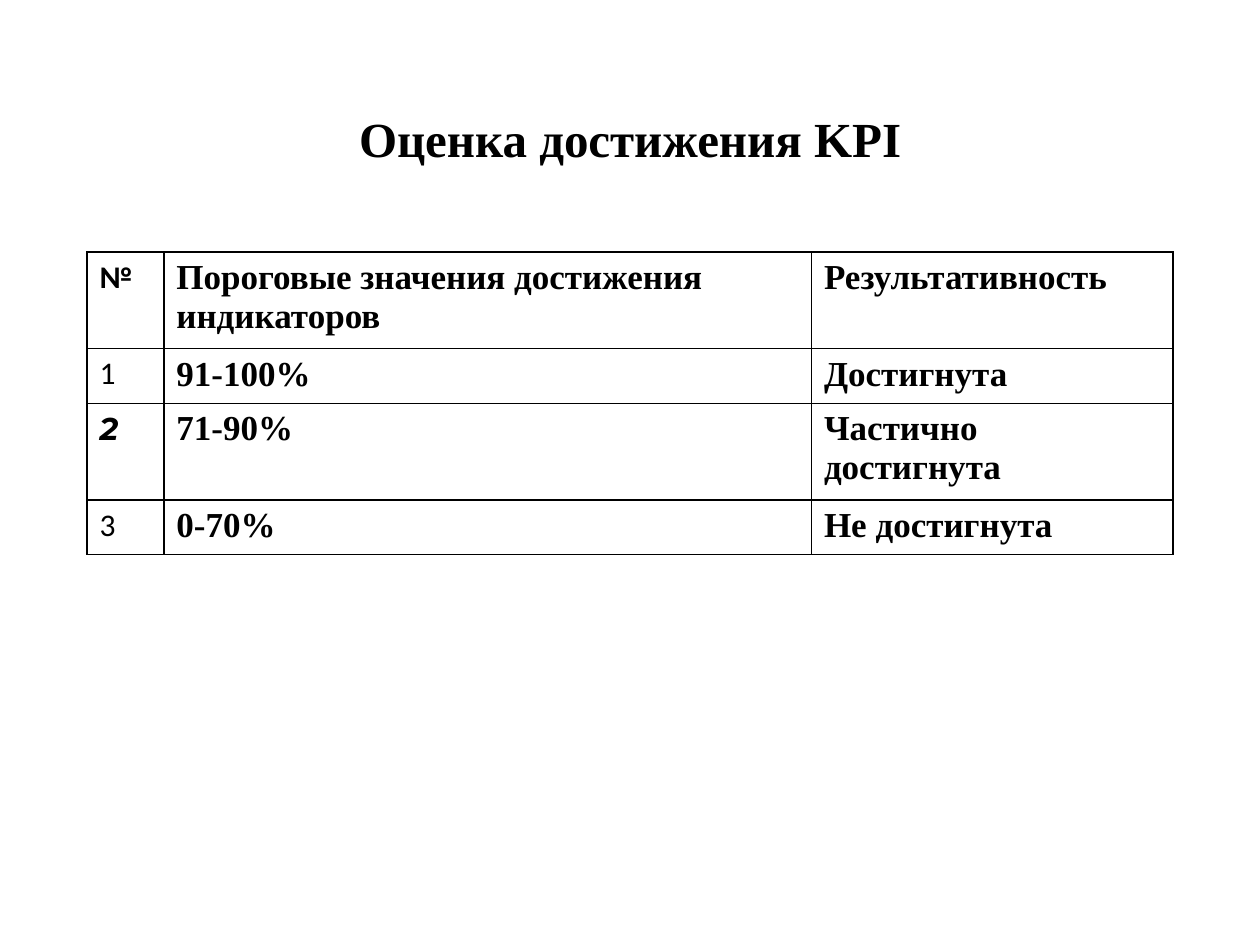
import pptx
import pptx.util
import pptx.dml.color
import pptx.enum.text
import pptx.oxml
import pptx.oxml.ns

Inches = pptx.util.Inches
Pt = pptx.util.Pt
INK = "000000"
PAPER = "FFFFFF"
SERIF = {"name": "Times New Roman", "size": Pt(20), "bold": True, "italic": False}
PLAIN = {"name": "Calibri", "size": Pt(18), "bold": False, "italic": False}
MARKS = [
    {**PLAIN, "bold": True},
    PLAIN,
    {**PLAIN, "name": "Montserrat", "bold": True, "italic": True},
    PLAIN,
]
WIDTHS = [0.61, 5.14, 2.87]
ROWS = [
    ["№", "Пороговые значения достижения индикаторов", "Результативность"],
    ["1", "91-100%", "Достигнута"],
    ["2", "71-90%", "Частично достигнута"],
    ["3", "0-70%", "Не достигнута"],
]


def color(text):
    return pptx.dml.color.RGBColor.from_string(text)


def write(para, text, style):
    run = para.add_run()
    run.text = text
    for key, value in style.items():
        setattr(run.font, key, value)
    run.font.color.rgb = color(INK)


def border(cell):
    props = cell._tc.get_or_add_tcPr()
    space = pptx.oxml.ns.nsdecls("a")
    for index, side in enumerate(("lnL", "lnR", "lnT", "lnB")):
        line = pptx.oxml.parse_xml(
            f'<a:{side} {space} w="{Pt(1)}"><a:solidFill>'
            f'<a:srgbClr val="{INK}"/></a:solidFill></a:{side}>'
        )
        props.insert(index, line)


def title(slide, box, text):
    frame = slide.shapes.add_textbox(*box).text_frame
    frame.word_wrap = True
    frame.vertical_anchor = pptx.enum.text.MSO_ANCHOR.MIDDLE
    para = frame.paragraphs[0]
    para.alignment = pptx.enum.text.PP_ALIGN.CENTER
    para.line_spacing = 0.9
    write(para, text, {**SERIF, "size": Pt(28)})


def grid(slide, box, rows):
    table = slide.shapes.add_table(len(rows), len(WIDTHS), *box).table
    for column, width in zip(table.columns, WIDTHS):
        column.width = Inches(width)
    for r, (row, mark) in enumerate(zip(rows, MARKS)):
        for c, text in enumerate(row):
            cell = table.cell(r, c)
            cell.fill.solid()
            cell.fill.fore_color.rgb = color(PAPER)
            border(cell)
            write(cell.text_frame.paragraphs[0], text, SERIF if c else mark)


def main():
    deck = pptx.Presentation()
    deck.slide_width = Inches(10)
    deck.slide_height = Inches(7.5)
    slide = deck.slides.add_slide(deck.slide_layouts[6])
    left, width = Inches(0.69), Inches(sum(WIDTHS))
    title(slide, (left, Inches(0.4), width, Inches(1.45)), "Оценка достижения KPI")
    grid(slide, (left, Inches(2), width, Inches(0.41 * len(ROWS))), ROWS)
    deck.save("out.pptx")


if __name__ == "__main__":
    main()
